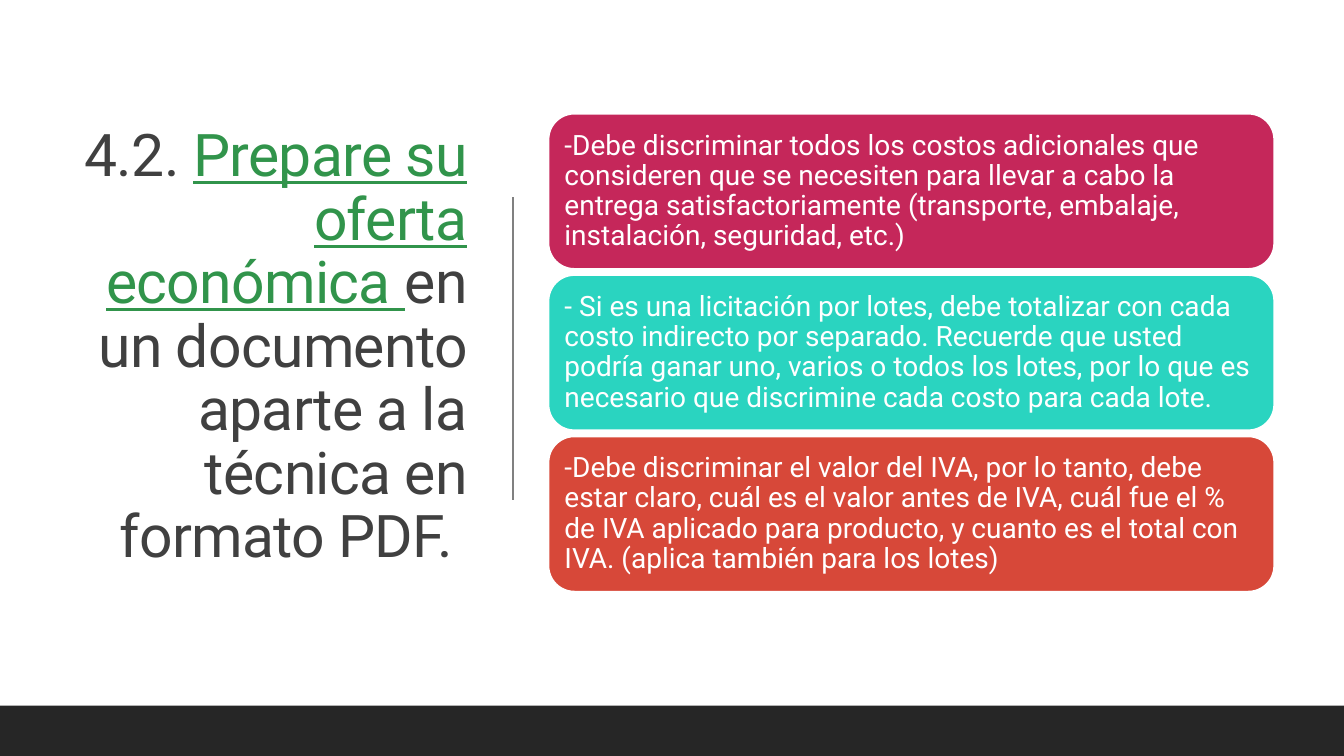
from pptx import Presentation
from pptx.dml.color import RGBColor
from pptx.enum import shapes, text
from pptx.oxml import xmlchemy
from pptx.util import Pt

FONT = "Roboto"
TITLE = [
    ("4.2. ", "404040", False),
    ("Prepare su oferta económica ", "31944B", True),
    ("en un documento aparte a la técnica en formato PDF. ", "404040", False),
]
CARDS = [
    ("C5275A", "-Debe discriminar todos los costos adicionales que consideren que se "
     "necesiten para llevar a cabo la entrega satisfactoriamente (transporte, "
     "embalaje, instalación, seguridad, etc.)"),
    ("2AD4C0", "- Si es una licitación por lotes, debe totalizar con cada costo indirecto "
     "por separado. Recuerde que usted podría ganar uno, varios o todos los lotes, "
     "por lo que es necesario que discrimine cada costo para cada lote."),
    ("D74839", "-Debe discriminar el valor del IVA, por lo tanto, debe estar claro, cuál es "
     "el valor antes de IVA, cuál fue el % de IVA aplicado para producto, y cuanto es "
     "el total con IVA. (aplica también para los lotes)"),
]


def color(value):
    return RGBColor.from_string(value)


def add_box(s, kind, x, y, w, h, fill):
    sp = s.shapes.add_shape(kind, Pt(x), Pt(y), Pt(w), Pt(h))
    sp.shadow.inherit = False
    sp.fill.solid()
    sp.fill.fore_color.rgb = color(fill)
    sp.line.fill.background()
    return sp


def add_title(s, x, y, w, h):
    sp = s.shapes.title
    sp.left, sp.top, sp.width, sp.height = Pt(x), Pt(y), Pt(w), Pt(h)
    tf = sp.text_frame
    tf.word_wrap = True
    tf.auto_size = text.MSO_AUTO_SIZE.NONE
    tf.vertical_anchor = text.MSO_ANCHOR.MIDDLE
    p = tf.paragraphs[0]
    p.alignment = text.PP_ALIGN.RIGHT
    p.line_spacing = 0.9
    p.font.name, p.font.size = FONT, Pt(42)
    for words, ink, underline in TITLE:
        r = p.add_run()
        r.text = words
        r.font.color.rgb = color(ink)
        r.font.underline = underline
        r._r.get_or_add_rPr().set("spc", "-50")


def add_divider(s, x, y, h):
    line = s.shapes.add_connector(
        shapes.MSO_CONNECTOR.STRAIGHT, Pt(x), Pt(y), Pt(x), Pt(y + h))
    line.line.color.rgb = color("808080")
    line.line.width = Pt(1)
    line._element.spPr.append(xmlchemy.OxmlElement("a:effectLst"))


def add_cards(s, x, y, w, h, gap):
    card_h = (h - gap * (len(CARDS) - 1)) / len(CARDS)
    for i, (fill, words) in enumerate(CARDS):
        sp = add_box(s, shapes.MSO_SHAPE.ROUNDED_RECTANGLE,
                     x, y + i * (card_h + gap), w, card_h, fill)
        sp.line.color.rgb = color("FFFFFF")
        sp.line.width = Pt(1.25)
        tf = sp.text_frame
        tf.word_wrap = True
        tf.vertical_anchor = text.MSO_ANCHOR.MIDDLE
        tf.margin_left = tf.margin_right = tf.margin_top = tf.margin_bottom = Pt(6)
        p = tf.paragraphs[0]
        p.text = words
        p.alignment = text.PP_ALIGN.LEFT
        p.line_spacing = 0.9
        p.font.name, p.font.size = FONT, Pt(20)
        p.font.color.rgb = color("FFFFFF")


def build_slide(prs):
    s = prs.slides.add_slide(prs.slide_layouts[5])
    s.background.fill.solid()
    s.background.fill.fore_color.rgb = color("FFFFFF")
    add_title(s, 50.4, 49.7, 290.2, 398.2)
    add_divider(s, 366.5, 141, 216)
    add_box(s, shapes.MSO_SHAPE.RECTANGLE, 0, 504, 960, 36, "262626")
    add_cards(s, 391.8, 81.2, 518.4, 341.4, 4.4)


def main():
    prs = Presentation()
    prs.slide_width, prs.slide_height = Pt(960), Pt(540)
    build_slide(prs)
    prs.save("out.pptx")


if __name__ == "__main__":
    main()
